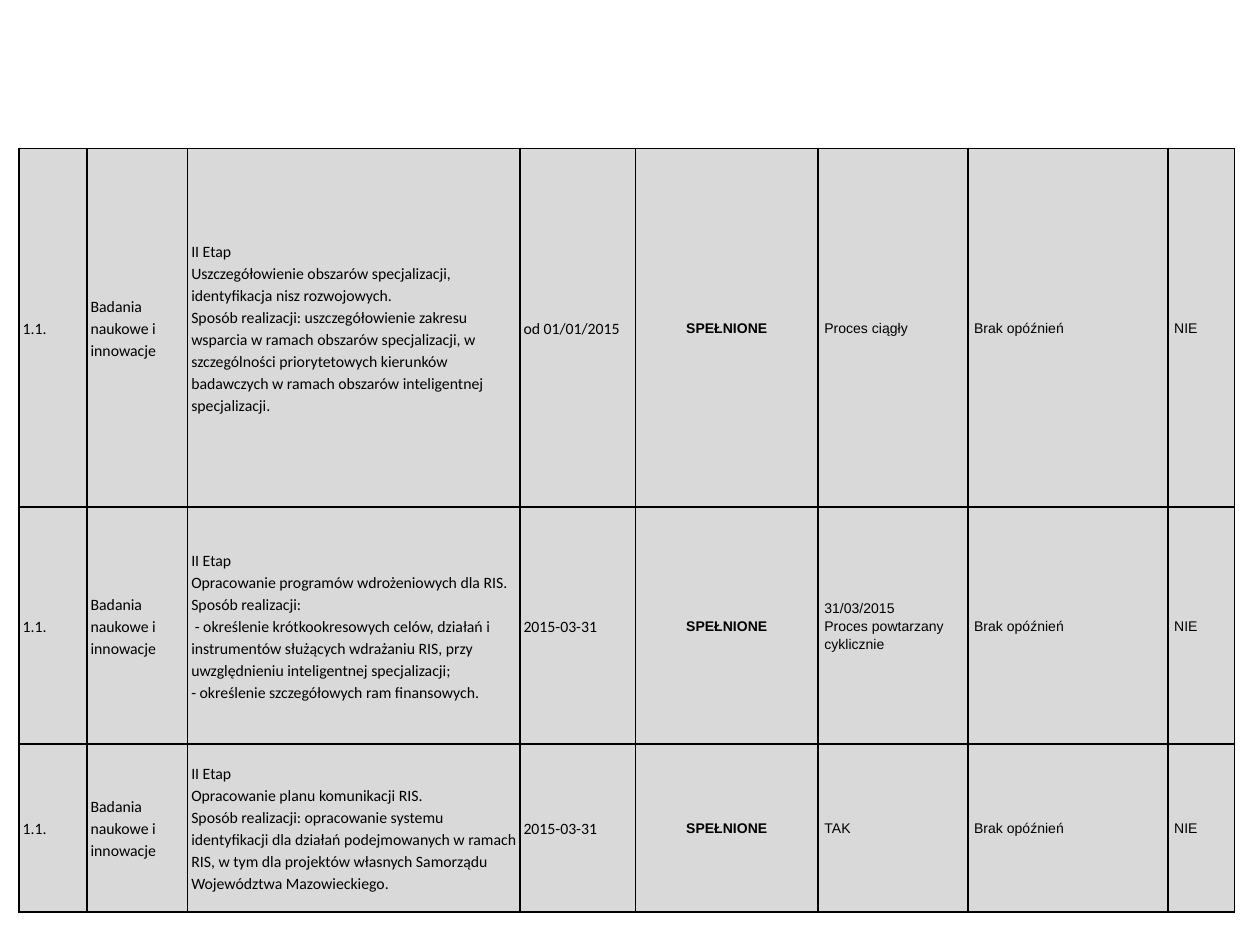
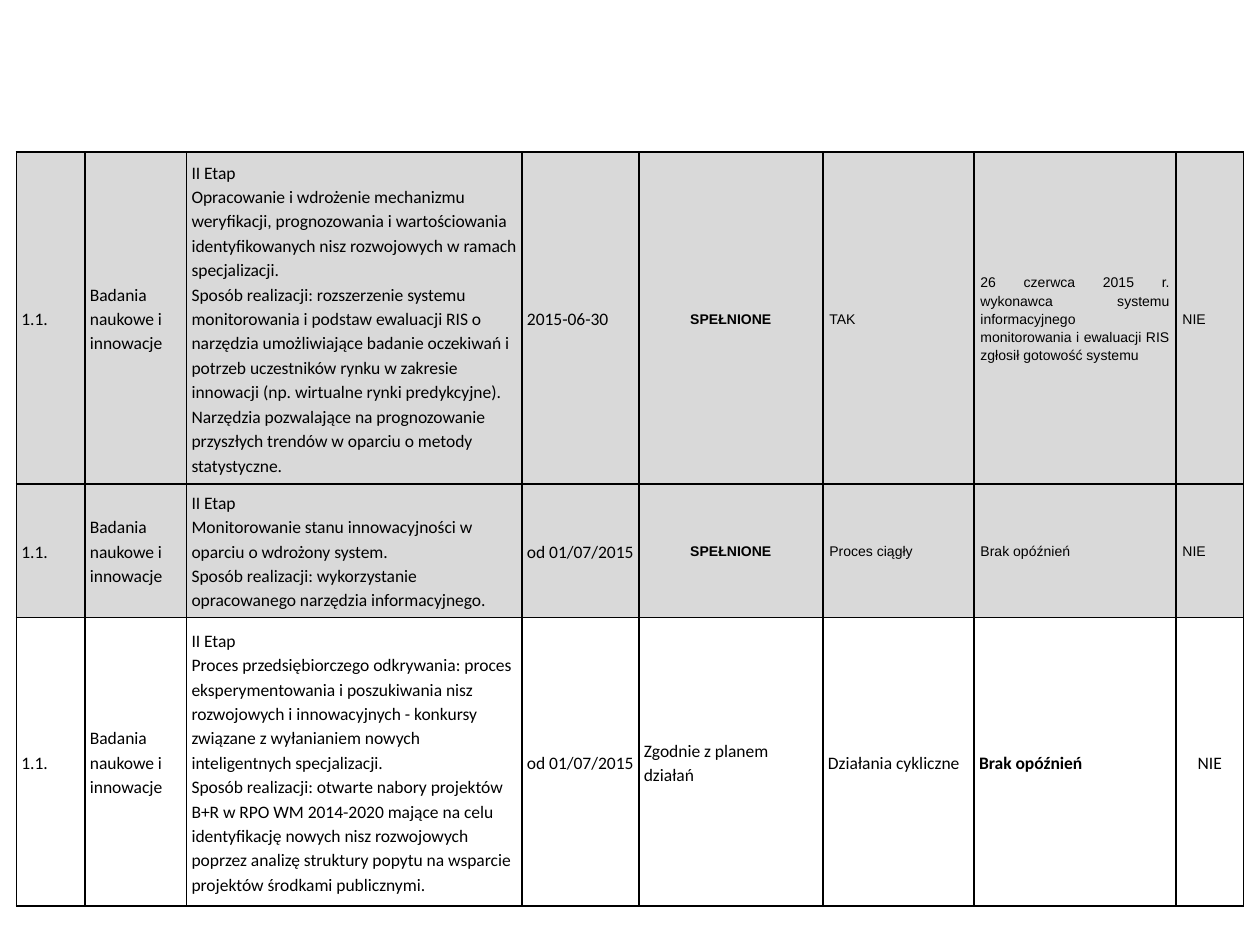
"""Build two slides of a progress table for regional innovation measures."""
from dataclasses import dataclass
from lxml import etree
from pptx import Presentation
from pptx.dml.color import RGBColor
from pptx.enum.text import MSO_ANCHOR, PP_ALIGN
from pptx.oxml.ns import qn
from pptx.util import Inches, Pt

LEFT, MID, JUST = PP_ALIGN.LEFT, PP_ALIGN.CENTER, PP_ALIGN.JUSTIFY
CENTRE = MSO_ANCHOR.MIDDLE
WIDE, HIGH = Inches(10), Inches(7.5)
BLACK, GREY = "000000", "D9D9D9"
COLS = (0.54, 0.8, 2.64, 0.92, 1.45, 1.19, 1.59, 0.53)
AREA, DONE, NONE = "Badania naukowe i innowacje", "SPEŁNIONE", "Brak opóźnień"


@dataclass(frozen=True)
class Look:
    """Type style of one cell."""
    face: str
    size: float
    inset: float
    after: float = 0
    align: PP_ALIGN = LEFT
    bold: bool = False


@dataclass(frozen=True)
class Row:
    """One measure: its share of the height, its texts and its state."""
    share: float
    plan: str
    date: str
    state: str
    term: str
    delay: str = NONE
    done: bool = True

    def texts(self) -> tuple[str, ...]:
        """Return the cell texts from left to right."""
        return ("1.1.", AREA, "II Etap\n" + self.plan, self.date,
                self.state, self.term, self.delay, "NIE")


@dataclass(frozen=True)
class Page:
    """One slide: table frame as shares of the slide, body style and rows."""
    left: float
    top: float
    width: float
    height: float
    size: float
    inset: float
    rows: tuple[Row, ...]


PAGES = (
    Page(0.015, 0.157, 0.965, 0.808, 9, 0.03, (
        Row(0.47, "Uszczegółowienie obszarów specjalizacji, identyfikacja nisz "
            "rozwojowych.\nSposób realizacji: uszczegółowienie zakresu wsparcia w "
            "ramach obszarów specjalizacji, w szczególności priorytetowych kierunków "
            "badawczych w ramach obszarów inteligentnej specjalizacji.",
            "od 01/01/2015", DONE, "Proces ciągły"),
        Row(0.31, "Opracowanie programów wdrożeniowych dla RIS.\n"
            "Sposób realizacji:\n - określenie krótkookresowych celów, działań i "
            "instrumentów służących wdrażaniu RIS, przy uwzględnieniu inteligentnej "
            "specjalizacji;\n- określenie szczegółowych ram finansowych.",
            "2015-03-31", DONE, "31/03/2015\nProces powtarzany cyklicznie"),
        Row(0.22, "Opracowanie planu komunikacji RIS.\nSposób realizacji: "
            "opracowanie systemu identyfikacji dla działań podejmowanych w ramach "
            "RIS, w tym dla projektów własnych Samorządu Województwa Mazowieckiego.",
            "2015-03-31", DONE, "TAK"))),
    Page(0.013, 0.161, 0.974, 0.798, 10, 0.04, (
        Row(0.44, "Opracowanie i wdrożenie mechanizmu weryfikacji, prognozowania i "
            "wartościowania identyfikowanych nisz rozwojowych w ramach specjalizacji.\n"
            "Sposób realizacji: rozszerzenie systemu monitorowania i podstaw ewaluacji "
            "RIS o narzędzia umożliwiające badanie oczekiwań i potrzeb uczestników "
            "rynku w zakresie innowacji (np. wirtualne rynki predykcyjne).\n"
            "Narzędzia pozwalające na prognozowanie przyszłych trendów w oparciu o "
            "metody statystyczne.", "2015-06-30", DONE, "TAK",
            "26 czerwca 2015 r. wykonawca systemu informacyjnego monitorowania i "
            "ewaluacji RIS zgłosił gotowość systemu"),
        Row(0.177, "Monitorowanie stanu innowacyjności w oparciu o wdrożony system.\n"
            "Sposób realizacji: wykorzystanie opracowanego narzędzia informacyjnego.",
            "od 01/07/2015", DONE, "Proces ciągły"),
        Row(0.383, "Proces przedsiębiorczego odkrywania: proces eksperymentowania i "
            "poszukiwania nisz rozwojowych i innowacyjnych - konkursy związane z "
            "wyłanianiem nowych inteligentnych specjalizacji.\nSposób realizacji: "
            "otwarte nabory projektów B+R w RPO WM 2014-2020 mające na celu "
            "identyfikację nowych nisz rozwojowych poprzez analizę struktury popytu "
            "na wsparcie projektów środkami publicznymi.",
            "od 01/07/2015", "Zgodnie z planem działań", "Działania cykliczne",
            done=False))),
)


def tint(code: str) -> RGBColor:
    """Turn a hex string into a colour."""
    return RGBColor.from_string(code)


def looks(page: Page, row: Row) -> list[Look]:
    """Return the eight cell styles of a row."""
    body = Look("Calibri", page.size, page.inset)
    if row.done:
        ends = [Look("Arial", 8, 0.05, 10, align, align == MID)
                for align in (MID, LEFT, JUST, JUST)]
    else:
        ends = [body, body, Look("Calibri", page.size, page.inset, bold=True),
                Look("Calibri", page.size, page.inset, align=MID)]
    return [body] * 4 + ends


def frame(cell) -> None:
    """Draw a thin black line on each side of a cell."""
    props = cell._tc.get_or_add_tcPr()
    for side in ("a:lnL", "a:lnR", "a:lnT", "a:lnB"):
        line = etree.SubElement(props, qn(side), w=str(Pt(1)))
        fill = etree.SubElement(line, qn("a:solidFill"))
        etree.SubElement(fill, qn("a:srgbClr"), val=BLACK)


def write(cell, text: str, look: Look) -> None:
    """Set the text of a cell line by line in one paragraph."""
    cell.vertical_anchor = CENTRE
    cell.margin_left = cell.margin_right = Inches(look.inset)
    cell.margin_top = cell.margin_bottom = 0
    para = cell.text_frame.paragraphs[0]
    para.alignment, para.line_spacing = look.align, 1.15
    para.space_after = Pt(look.after)
    for num, line in enumerate(text.split("\n")):
        if num:
            para.add_line_break()
        run = para.add_run()
        run.text = line
        font = run.font
        font.name, font.size, font.bold = look.face, Pt(look.size), look.bold
        font.color.rgb = tint(BLACK)


def draw(deck, page: Page) -> None:
    """Add a slide with its table."""
    slide = deck.slides.add_slide(deck.slide_layouts[6])
    width, height = WIDE * page.width, HIGH * page.height
    table = slide.shapes.add_table(
        len(page.rows), len(COLS), int(WIDE * page.left), int(HIGH * page.top),
        int(width), int(height)).table
    table.first_row = table.horz_banding = False
    for col, part in zip(table.columns, COLS):
        col.width = int(width * part / sum(COLS))
    for line, row in zip(table.rows, page.rows):
        line.height = int(height * row.share)
        for cell, text, look in zip(line.cells, row.texts(), looks(page, row)):
            frame(cell)
            if row.done:
                cell.fill.solid()
                cell.fill.fore_color.rgb = tint(GREY)
            else:
                cell.fill.background()
            write(cell, text, look)


def main() -> None:
    """Build and save the deck."""
    deck = Presentation()
    deck.slide_width, deck.slide_height = WIDE, HIGH
    for page in PAGES:
        draw(deck, page)
    deck.save("out.pptx")


if __name__ == "__main__":
    main()
